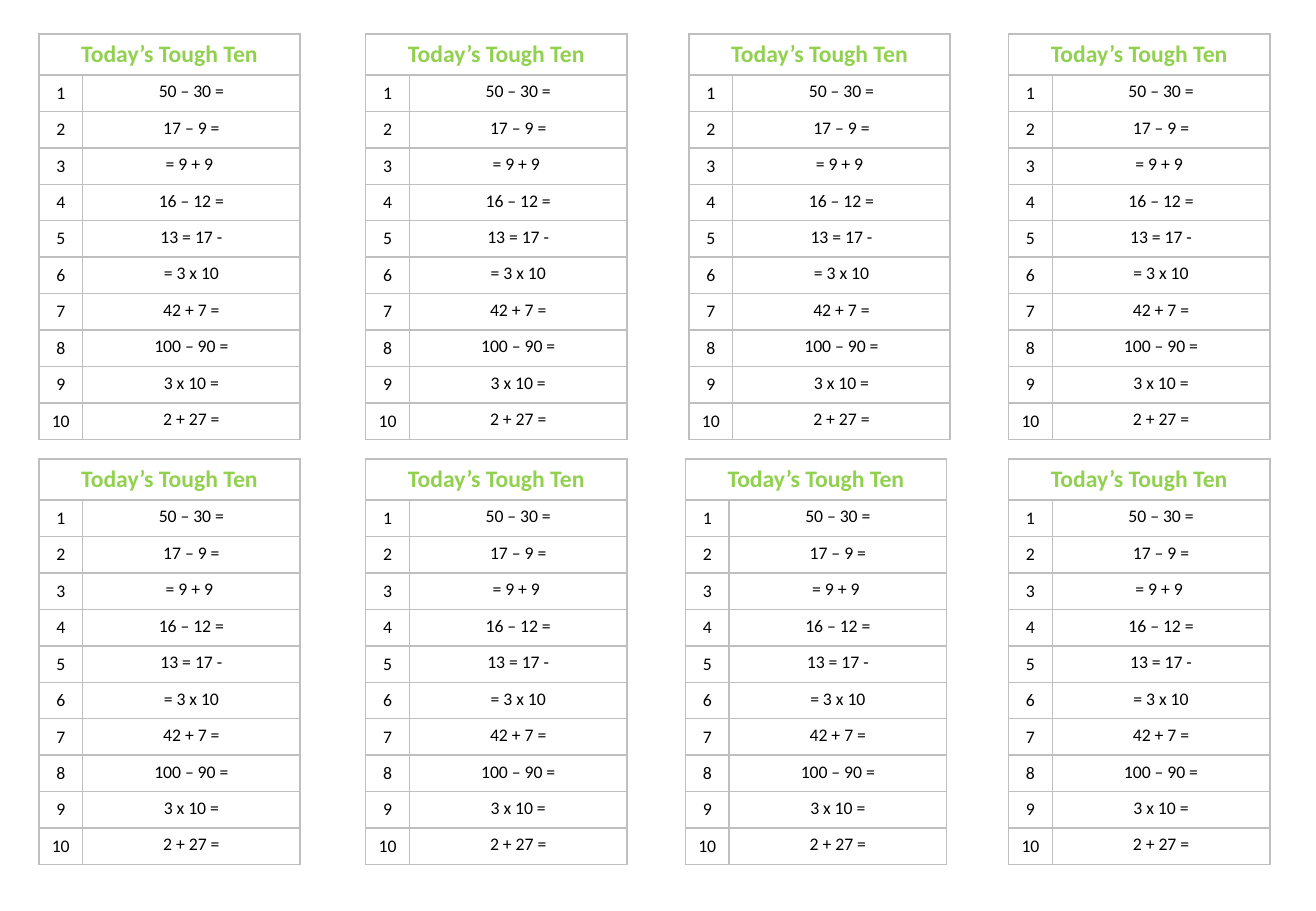
from lxml.etree import SubElement
from pptx import Presentation
from pptx.dml.color import RGBColor
from pptx.enum.text import MSO_ANCHOR, PP_ALIGN
from pptx.oxml.ns import qn
from pptx.util import Inches, Pt

COLORS = {"title": "92D050", "text": "000000", "grid": "BFBFBF"}
TITLE = "Today’s Tough Ten"
SUMS = ["50 – 30 =", "17 – 9 =", "= 9 + 9 ", "16 – 12 =", "13 = 17 -",
        "= 3 x 10", "42 + 7 =", "100 – 90 =", "3 x 10 =", "2 + 27 ="]

SLIDE = (10.83, 7.5)
ROWS = {0.28: [0.32, 3.01, 5.67, 8.3],  # top of each row: lefts of its cards
        3.78: [0.32, 3.01, 5.64, 8.3]}
COLS = [0.36, 1.79]
HEIGHTS = [0.25] + [0.3] * len(SUMS)
CARD = (sum(COLS), 3.33)

HEAD = {"size": Pt(14), "bold": True, "name": "Calibri"}
BODY = {"size": Pt(10.5), "bold": False, "name": "Calibri"}


def add_line(parent, tag, width, color):
    line = SubElement(parent, qn(tag), w=str(Pt(width)))
    fill = SubElement(line, qn("a:solidFill"))
    SubElement(fill, qn("a:srgbClr"), val=COLORS[color])
    return line


def frame_cell(cell):
    """Give the cell a thin border on all sides and no fill."""
    props = cell._tc.get_or_add_tcPr()
    for side in "LRTB":
        add_line(props, f"a:ln{side}", 1, "grid")
    cell.fill.background()


def write(cell, text, style, color, anchor=MSO_ANCHOR.TOP):
    cell.vertical_anchor = anchor
    para = cell.text_frame.paragraphs[0]
    para.alignment = PP_ALIGN.CENTER
    run = para.add_run()
    run.text = text
    for name, value in style.items():
        setattr(run.font, name, value)
    run.font.color.rgb = RGBColor.from_string(COLORS[color])
    return run


def add_card(slide, left, top):
    box = [Inches(n) for n in (left, top, *CARD)]
    shape = slide.shapes.add_table(len(HEIGHTS), len(COLS), *box)
    table = shape.table
    table.first_row = table.horz_banding = False
    for col, width in zip(table.columns, COLS):
        col.width = Inches(width)
    for row, height in zip(table.rows, HEIGHTS):
        row.height = Inches(height)
    shape.height = Inches(CARD[1])
    for cell in table.iter_cells():
        frame_cell(cell)

    head = table.cell(0, 0)
    head.merge(table.cell(0, 1))
    run = write(head, TITLE, HEAD, "title")
    props = run.font._element
    props.insert(0, add_line(props, "a:ln", 0.25, "text"))

    for num, task in enumerate(SUMS, 1):
        write(table.cell(num, 0), str(num), BODY, "text", MSO_ANCHOR.MIDDLE)
        write(table.cell(num, 1), task, BODY, "text")


def main():
    deck = Presentation()
    deck.slide_width, deck.slide_height = map(Inches, SLIDE)
    slide = deck.slides.add_slide(deck.slide_layouts[6])
    for top, lefts in ROWS.items():
        for left in lefts:
            add_card(slide, left, top)
    deck.save("out.pptx")


if __name__ == "__main__":
    main()
